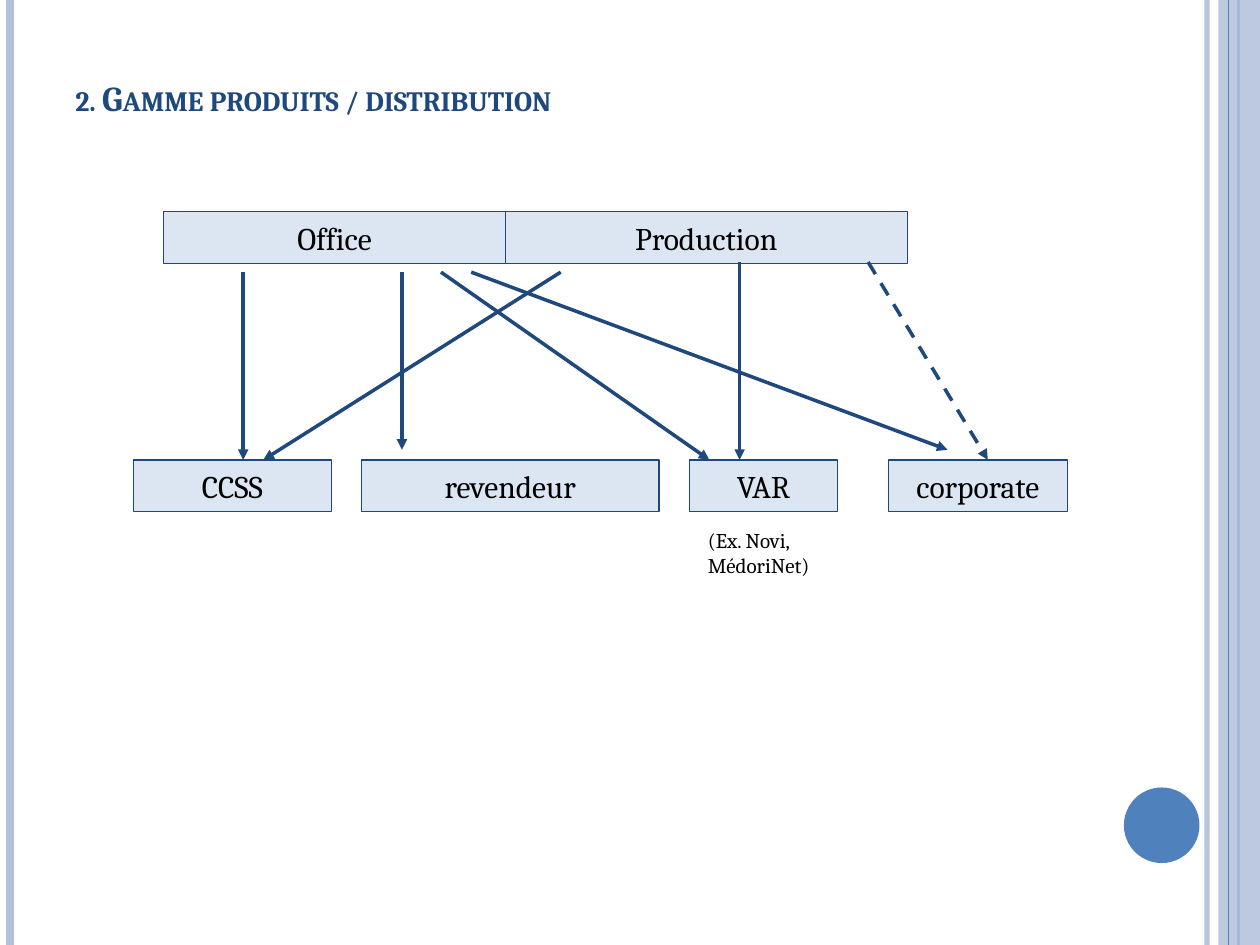
from dataclasses import dataclass

from lxml.etree import SubElement
from pptx import Presentation
from pptx.dml.color import RGBColor
from pptx.enum.dml import MSO_LINE_DASH_STYLE as Dash
from pptx.enum.shapes import MSO_CONNECTOR as Connector, MSO_SHAPE as Shape
from pptx.enum.text import MSO_ANCHOR as Anchor, MSO_AUTO_SIZE as AutoSize, PP_ALIGN as Align
from pptx.oxml.ns import qn
from pptx.util import Inches, Pt

NAVY = RGBColor(0x1F, 0x49, 0x7D)
BLUE = RGBColor(0x4F, 0x81, 0xBD)
PALE_BLUE = RGBColor(0xDC, 0xE6, 0xF2)
GREY_BLUE = RGBColor(0xB3, 0xC1, 0xDB)
BLACK = RGBColor(0, 0, 0)
FONT = "Cambria"
WIDTH, HEIGHT = 10, 7.5
BOX_HEIGHT = 0.41
PRODUCT_TOP, CHANNEL_TOP = 1.68, 3.65
BELOW_PRODUCTS, PRODUCT_EDGE, ABOVE_CHANNELS = 2.16, 2.08, 3.57


@dataclass(frozen=True)
class Box:
    label: str
    left: float
    top: float
    width: float


@dataclass(frozen=True)
class Line:
    start: tuple[float, float]
    end: tuple[float, float]
    color: RGBColor = NAVY
    weight: float = 2
    dashed: bool = False
    arrow: bool = True
    opacity: int = 100


BOXES = [
    Box("Office", 1.3, PRODUCT_TOP, 2.71),
    Box("Production", 4.01, PRODUCT_TOP, 3.19),
    Box("CCSS", 1.06, CHANNEL_TOP, 1.57),
    Box("revendeur", 2.87, CHANNEL_TOP, 2.36),
    Box("VAR", 5.47, CHANNEL_TOP, 1.18),
    Box("corporate", 7.05, CHANNEL_TOP, 1.42),
]
ARROWS = [
    Line((1.93, BELOW_PRODUCTS), (1.93, CHANNEL_TOP)),
    Line((4.45, BELOW_PRODUCTS), (2.09, CHANNEL_TOP)),
    Line((3.19, BELOW_PRODUCTS), (3.19, ABOVE_CHANNELS)),
    Line((3.74, BELOW_PRODUCTS), (7.52, ABOVE_CHANNELS)),
    Line((5.87, PRODUCT_EDGE), (5.87, CHANNEL_TOP)),
    Line((6.89, PRODUCT_EDGE), (7.84, CHANNEL_TOP), dashed=True),
    Line((3.5, BELOW_PRODUCTS), (5.63, CHANNEL_TOP)),
]


def rule(x: float, color: RGBColor, weight: float, opacity: int = 100) -> Line:
    return Line((x, 0), (x, HEIGHT), color, weight, arrow=False, opacity=opacity)


def set_opacity(fill_parent, percent: int) -> None:
    color = fill_parent.find(qn("a:solidFill"))[0]
    SubElement(color, qn("a:alpha"), val=str(percent * 1000))


def add_line(slide, line: Line) -> None:
    ends = [Inches(value) for value in (*line.start, *line.end)]
    connector = slide.shapes.add_connector(Connector.STRAIGHT, *ends)
    connector.line.color.rgb = line.color
    connector.line.width = Pt(line.weight)
    if line.dashed:
        connector.line.dash_style = Dash.DASH
    properties = connector.line._get_or_add_ln()
    if line.opacity < 100:
        set_opacity(properties, line.opacity)
    if line.arrow:
        SubElement(properties, qn("a:tailEnd"), type="triangle")
    SubElement(connector._element.spPr, qn("a:effectLst"))


def add_shape(slide, kind: Shape, left: float, top: float, width: float,
              height: float, fill: RGBColor):
    shape = slide.shapes.add_shape(kind, *map(Inches, (left, top, width, height)))
    shape.shadow.inherit = False
    shape.fill.solid()
    shape.fill.fore_color.rgb = fill
    shape.line.fill.background()
    return shape


def add_run(paragraph, text: str, size: float, color: RGBColor = BLACK):
    run = paragraph.add_run()
    run.text = text
    run.font.name = FONT
    run.font.size = Pt(size)
    run.font.color.rgb = color
    return run


def add_box(slide, box: Box) -> None:
    shape = add_shape(slide, Shape.RECTANGLE, box.left, box.top, box.width,
                      BOX_HEIGHT, PALE_BLUE)
    shape.line.color.rgb = NAVY
    shape.line.width = Pt(0.75)
    shape.text_frame.vertical_anchor = Anchor.MIDDLE
    paragraph = shape.text_frame.paragraphs[0]
    paragraph.alignment = Align.CENTER
    add_run(paragraph, box.label, 18)


def add_frame(slide) -> None:
    for line in (rule(9.58, GREY_BLUE, 3, 93), rule(0.08, GREY_BLUE, 4.5),
                 rule(9.83, BLUE, 1.5)):
        add_line(slide, line)
    band = add_shape(slide, Shape.RECTANGLE, 9.67, 0, 0.33, HEIGHT, GREY_BLUE)
    set_opacity(band._element.spPr, 87)
    add_line(slide, rule(9.75, BLUE, 0.75))
    add_shape(slide, Shape.OVAL, 8.92, 6.25, 0.6, 0.6, BLUE)


def add_title(slide, text: str) -> None:
    title = slide.shapes.add_textbox(Inches(0.5), Inches(0.3), Inches(9), Inches(0.69))
    title.text_frame.word_wrap = True
    title.text_frame.vertical_anchor = Anchor.BOTTOM
    run = add_run(title.text_frame.paragraphs[0], text, 20, NAVY)
    run.font.bold = True
    run.font._element.set("cap", "small")


def add_note(slide, lines: list[str]) -> None:
    note = slide.shapes.add_textbox(Inches(5.52), Inches(4.14), Inches(1.1), Inches(0.5))
    frame = note.text_frame
    frame.word_wrap = False
    frame.auto_size = AutoSize.SHAPE_TO_FIT_TEXT
    for index, text in enumerate(lines):
        paragraph = frame.add_paragraph() if index else frame.paragraphs[0]
        add_run(paragraph, text, 12)


def main() -> None:
    """Build the product range and distribution slide."""
    presentation = Presentation()
    presentation.slide_width = Inches(WIDTH)
    presentation.slide_height = Inches(HEIGHT)
    slide = presentation.slides.add_slide(presentation.slide_layouts[6])
    add_frame(slide)
    add_title(slide, "2. Gamme produits / distribution")
    for box in BOXES:
        add_box(slide, box)
    for arrow in ARROWS:
        add_line(slide, arrow)
    add_note(slide, ["(Ex. Novi,", "MédoriNet)"])
    presentation.save("out.pptx")


if __name__ == "__main__":
    main()
